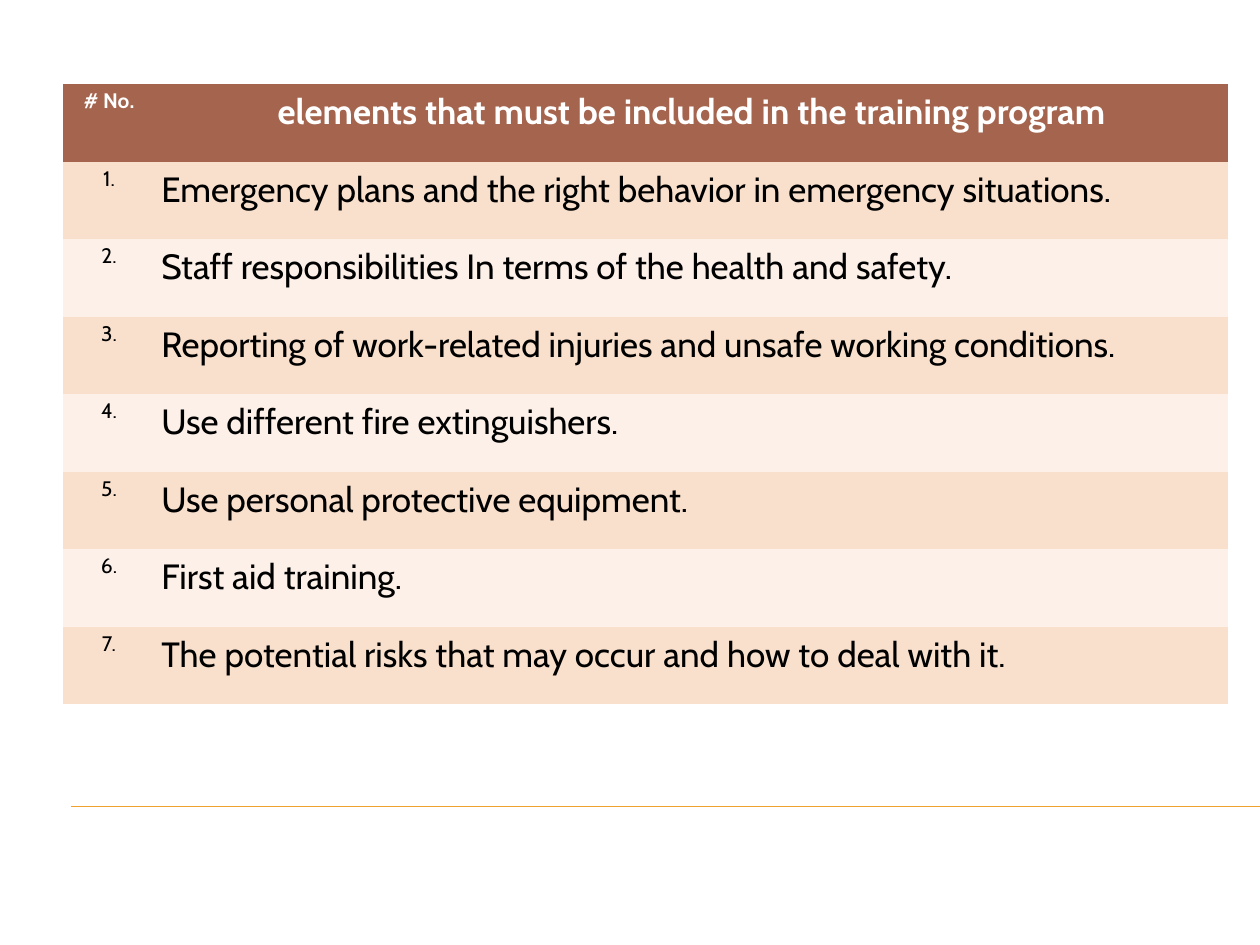
from dataclasses import dataclass

from lxml import etree
from pptx import Presentation
from pptx.dml.color import RGBColor
from pptx.enum.shapes import MSO_CONNECTOR
from pptx.enum.text import MSO_ANCHOR, PP_ALIGN
from pptx.oxml.ns import qn
from pptx.util import Inches, Pt

STRAIGHT = MSO_CONNECTOR.STRAIGHT
TOP = MSO_ANCHOR.TOP
LEFT, CENTER = PP_ALIGN.LEFT, PP_ALIGN.CENTER
NO_GRID_STYLE = "{2D5ABB26-0587-4C30-8999-92F81FD0307C}"

HEADERS = ("# No.", "elements that must be included in the training program")
ELEMENTS = (
    "Emergency plans and the right behavior in emergency situations.",
    "Staff responsibilities In terms of the health and safety.",
    "Reporting of work-related injuries and unsafe working conditions.",
    "Use different fire extinguishers.",
    "Use personal protective equipment.",
    "First aid training.",
    "The potential risks that may occur and how to deal with it.",
)


@dataclass(frozen=True)
class Theme:
    """Colours, font and type sizes of the slide."""

    font: str = "Cabin"
    number_size: int = 12
    text_size: int = 20
    line_spacing: float = 1.15
    header_fill: str = "A5644E"
    bands: tuple = ("F9E0CD", "FCF0E8")
    header_text: str = "FFFFFF"
    body_text: str = "000000"
    rule: str = "F0A22E"


class SlideBuilder:
    """Draws styled elements on the current slide."""

    def __init__(self, slide, theme):
        self.slide = slide
        self.theme = theme

    def rule(self, x1, x2, y):
        """Draw a thin horizontal rule."""
        sp = self.slide.shapes.add_connector(
            STRAIGHT, Inches(x1), Inches(y), Inches(x2), Inches(y))
        sp.line.color.rgb = RGBColor.from_string(self.theme.rule)
        sp.line.width = Pt(0.75)
        etree.SubElement(sp._element.spPr, qn("a:effectLst"))

    def cell(self, cell, text, size, align, fill, color, bold):
        """Fill one table cell and write its text."""
        cell.fill.solid()
        cell.fill.fore_color.rgb = RGBColor.from_string(fill)
        cell.margin_left = cell.margin_right = Inches(0.05)
        cell.margin_top = cell.margin_bottom = 0
        cell.vertical_anchor = TOP
        p = cell.text_frame.paragraphs[0]
        p.alignment = align
        p.line_spacing = self.theme.line_spacing
        r = p.add_run()
        r.text = text
        r.font.name = self.theme.font
        r.font.size = Pt(size)
        r.font.bold = bold
        r.font.color.rgb = RGBColor.from_string(color)

    def table(self, left, top, widths, height, rows):
        """Add a banded table whose first row is the header."""
        t = self.theme
        frame = self.slide.shapes.add_table(
            len(rows), len(widths), Inches(left), Inches(top),
            Inches(sum(widths)), Inches(height))
        table = frame.table
        table._tbl.tblPr.find(qn("a:tableStyleId")).text = NO_GRID_STYLE
        for column, width in zip(table.columns, widths):
            column.width = Inches(width)
        for i, (number, text) in enumerate(rows):
            header = i == 0
            fill = t.header_fill if header else t.bands[(i - 1) % 2]
            color = t.header_text if header else t.body_text
            self.cell(table.cell(i, 0), number, t.number_size, CENTER,
                      fill, color, header)
            self.cell(table.cell(i, 1), text, t.text_size,
                      CENTER if header else LEFT, fill, color, header)


def main():
    """Build and save the training program slide."""
    prs = Presentation()
    prs.slide_width, prs.slide_height = Inches(10), Inches(7.5)
    s = SlideBuilder(prs.slides.add_slide(prs.slide_layouts[6]), Theme())
    s.rule(0.56, 10, 6.4)
    numbered = [(f"{n}.", text) for n, text in enumerate(ELEMENTS, 1)]
    s.table(0.5, 0.67, (0.73, 8.52), 4.92, [HEADERS, *numbered])
    prs.save("out.pptx")


if __name__ == "__main__":
    main()
